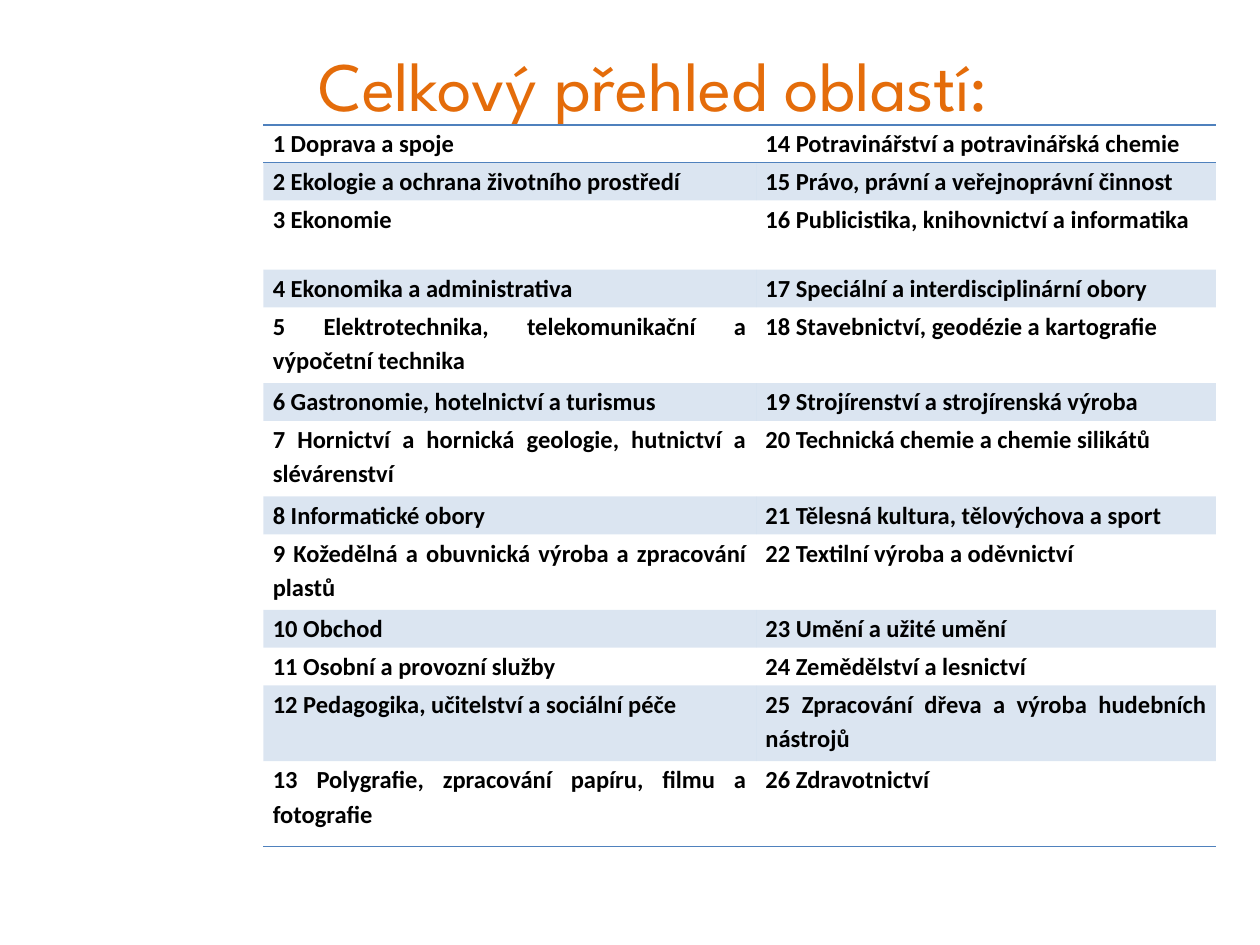
from lxml.etree import SubElement
from pptx import Presentation
from pptx.dml.color import RGBColor
from pptx.enum.text import MSO_ANCHOR, MSO_AUTO_SIZE, PP_ALIGN
from pptx.oxml.ns import qn
from pptx.util import Pt

ORANGE = RGBColor(0xE4, 0x6C, 0x0A)
BLUE = RGBColor(0x4F, 0x81, 0xBD)
BLACK = RGBColor(0, 0, 0)
PLAIN_STYLE = "{2D5ABB26-0587-4C30-8999-92F81FD0307C}"
SINGLE, DOUBLE = 21.6, 43.2
COLUMN_WIDTHS = (281.52, 262.8)

FIELDS = [
    ("1 Doprava a spoje", "14 Potravinářství a potravinářská chemie", SINGLE),
    ("2 Ekologie a ochrana životního prostředí", "15 Právo, právní a veřejnoprávní činnost", SINGLE),
    ("3 Ekonomie", "16 Publicistika, knihovnictví a informatika", 39.6),
    ("4 Ekonomika a administrativa", "17 Speciální a interdisciplinární obory", SINGLE),
    ("5 Elektrotechnika, telekomunikační a výpočetní technika", "18 Stavebnictví, geodézie a kartografie", DOUBLE),
    ("6 Gastronomie, hotelnictví a turismus", "19 Strojírenství a strojírenská výroba", SINGLE),
    ("7 Hornictví a hornická geologie, hutnictví a slévárenství", "20 Technická chemie a chemie silikátů", DOUBLE),
    ("8 Informatické obory", "21 Tělesná kultura, tělovýchova a sport", SINGLE),
    ("9 Kožedělná a obuvnická výroba a zpracování plastů", "22 Textilní výroba a oděvnictví", DOUBLE),
    ("10 Obchod", "23 Umění a užité umění", SINGLE),
    ("11 Osobní a provozní služby", "24 Zemědělství a lesnictví", SINGLE),
    ("12 Pedagogika, učitelství a sociální péče", "25 Zpracování dřeva a výroba hudebních nástrojů", DOUBLE),
    ("13 Polygrafie, zpracování papíru, filmu a fotografie", "26 Zdravotnictví", 48.96),
]


def format_title(title):
    """Place the heading in the upper part of its placeholder."""
    title.left, title.top, title.width, title.height = Pt(60), Pt(21), Pt(648), Pt(90)
    frame = title.text_frame
    frame.text = "Celkový přehled oblastí:"
    frame.auto_size = MSO_AUTO_SIZE.NONE
    frame.vertical_anchor = MSO_ANCHOR.MIDDLE
    frame.margin_right, frame.margin_bottom = Pt(28.8), Pt(40)
    heading = frame.paragraphs[0]
    heading.alignment = PP_ALIGN.CENTER
    heading.font.name, heading.font.size = "League Spartan", Pt(39.6)
    heading.font.color.rgb = ORANGE


def add_rule(cell, side):
    """Draw a thin blue border on one side of a cell."""
    rule = SubElement(cell._tc.get_or_add_tcPr(), qn(f"a:{side}"), w=str(Pt(1)))
    SubElement(SubElement(rule, qn("a:solidFill")), qn("a:srgbClr"), val=str(BLUE))


def fill_band(cell):
    """Fill a cell with blue at 20 % opacity."""
    cell.fill.solid()
    cell.fill.fore_color.rgb = BLUE
    colour = cell._tc.tcPr.find(qn("a:solidFill")).find(qn("a:srgbClr"))
    SubElement(colour, qn("a:alpha"), val="20000")


def write_cell(cell, field):
    """Write a field name as bold justified text."""
    cell.text = field
    cell.margin_left = cell.margin_right = Pt(5.4)
    cell.margin_top = cell.margin_bottom = 0
    entry = cell.text_frame.paragraphs[0]
    entry.alignment, entry.line_spacing = PP_ALIGN.JUSTIFY, 1.15
    entry.font.name, entry.font.size, entry.font.bold = "Calibri", Pt(14), True
    entry.font.color.rgb = BLACK


def add_overview(slide):
    """Add the two-column table of fields with banded rows."""
    height = sum(row_height for *_, row_height in FIELDS)
    frame = slide.shapes.add_table(len(FIELDS), len(COLUMN_WIDTHS), Pt(150.5), Pt(71.3),
                                   Pt(sum(COLUMN_WIDTHS)), Pt(height))
    overview = frame.table
    overview._tbl.tblPr.find(qn("a:tableStyleId")).text = PLAIN_STYLE
    overview.first_row = overview.horz_banding = False
    for column, width in zip(overview.columns, COLUMN_WIDTHS):
        column.width = Pt(width)
    last = len(FIELDS) - 1
    for index, (*fields, row_height) in enumerate(FIELDS):
        overview.rows[index].height = Pt(row_height)
        for cell, field in zip(overview.rows[index].cells, fields):
            write_cell(cell, field)
            if index == 0:
                add_rule(cell, "lnT")
            if index in (0, last):
                add_rule(cell, "lnB")
            if index % 2:
                fill_band(cell)
            else:
                cell.fill.background()


def main():
    """Build and save the overview slide."""
    presentation = Presentation()
    presentation.slide_width, presentation.slide_height = Pt(720), Pt(540)
    slide = presentation.slides.add_slide(presentation.slide_layouts[5])
    format_title(slide.shapes.title)
    add_overview(slide)
    presentation.save("out.pptx")


if __name__ == "__main__":
    main()
